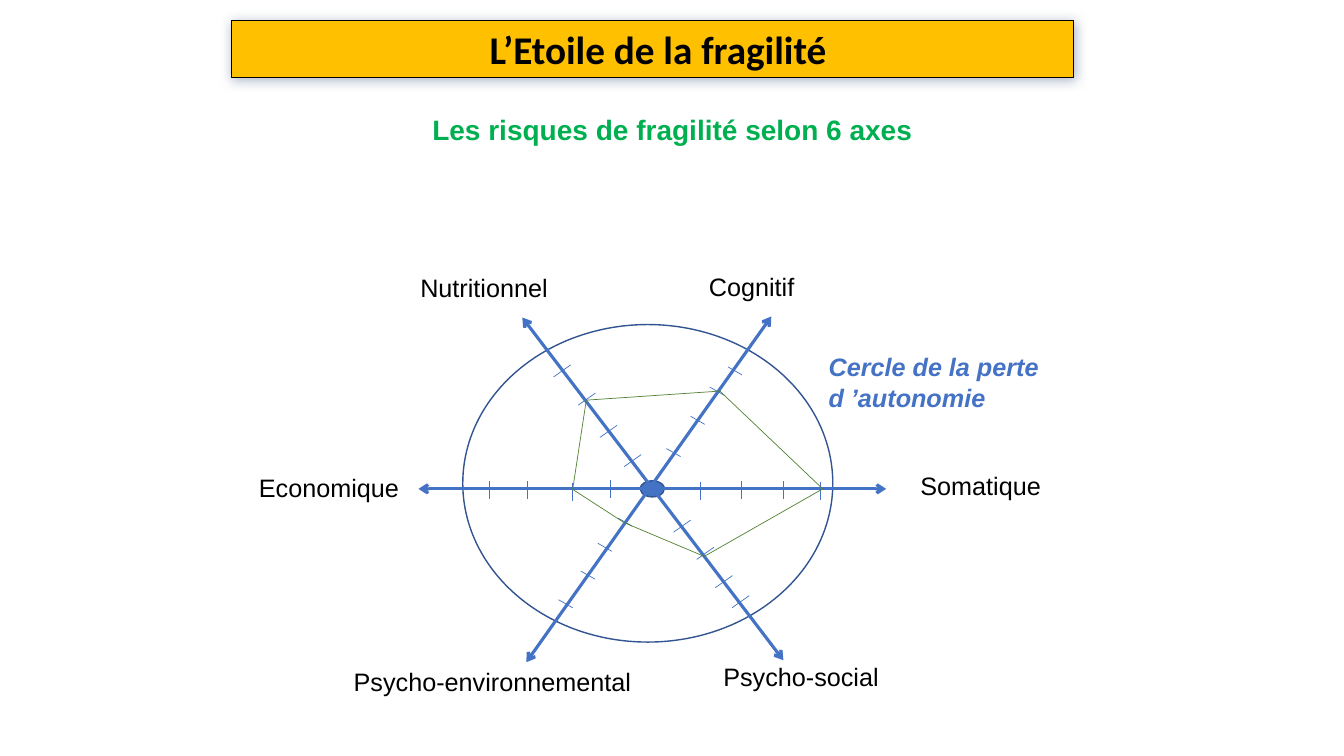
from lxml import etree
from pptx import Presentation
from pptx import util as u
from pptx.dml.color import RGBColor
from pptx.enum import shapes, text
from pptx.oxml.ns import qn

THEME = {
    "axis": "4472C4", "ring": "325491", "profile": "548235",
    "banner": "FFC000", "shadow": "ADB9CA", "ink": "000000", "subtitle": "00B050",
    "title_font": "Calibri", "body_font": "Arial",
    "title_size": 28, "subtitle_size": 20, "label_size": 18,
    "axis_width": 2.25, "ring_width": 1, "banner_width": 0.75, "thin_width": 0.5,
}

prs = Presentation()
prs.slide_width, prs.slide_height = u.Inches(13.33), u.Inches(7.5)
s = prs.slides.add_slide(prs.slide_layouts[6])
CELL = prs.slide_height / 75  # square grid, 75 rows high


def segment(start, end, color, width, arrows=False):
    ends = [round(v * CELL) for v in (*start, *end)]
    line = s.shapes.add_connector(shapes.MSO_CONNECTOR.STRAIGHT, *ends)
    line.line.color.rgb = RGBColor.from_string(THEME[color])
    line.line.width = u.Pt(THEME[width])
    if arrows:
        ln = line.line._get_or_add_ln()
        for tag in ("a:headEnd", "a:tailEnd"):
            etree.SubElement(ln, qn(tag), type="arrow")
    etree.SubElement(line._element.spPr, qn("a:effectLst"))


def write(sp, words, size, color="ink", font="body_font", align="LEFT", bold=False, italic=False):
    tf = sp.text_frame
    tf.word_wrap = True
    tf.vertical_anchor = text.MSO_ANCHOR.TOP
    tf.auto_size = text.MSO_AUTO_SIZE.SHAPE_TO_FIT_TEXT
    p = tf.paragraphs[0]
    p.alignment = text.PP_ALIGN[align]
    r = p.add_run()
    r.text = words
    r.font.name, r.font.size = THEME[font], u.Pt(THEME[size])
    r.font.bold, r.font.italic = bold, italic
    r.font.color.rgb = RGBColor.from_string(THEME[color])
    return p


# Title banner, outer circle and hub: kind, box, fill, line, width
figures = []
for kind, box, fill, line, width in (
    ("RECTANGLE", (23, 2, 83.5, 5.7), "banner", "ink", "banner_width"),
    ("OVAL", (45.9, 32.2, 36.7, 31.5), None, "ring", "ring_width"),
    ("OVAL", (63.5, 47.7, 2.4, 1.6), "axis", "ring", "ring_width"),
):
    sp = s.shapes.add_shape(shapes.MSO_SHAPE[kind], *[round(v * CELL) for v in box])
    sp.shadow.inherit = False
    if fill:
        sp.fill.solid()
        sp.fill.fore_color.rgb = RGBColor.from_string(THEME[fill])
    else:
        sp.fill.background()
    sp.line.color.rgb = RGBColor.from_string(THEME[line])
    sp.line.width = u.Pt(THEME[width])
    figures.append(sp)

# Title text and soft banner shadow
banner = figures[0]
p = write(banner, "L’Etoile de la fragilité", "title_size", font="title_font", align="CENTER", bold=True)
p._p.get_or_add_pPr().set("marL", str(u.Inches(0.1)))
glow = etree.SubElement(
    banner._element.spPr.find(qn("a:effectLst")), qn("a:outerShdw"),
    blurRad=str(u.Pt(8.5)), dist=str(u.Pt(1)), dir="5400000", algn="t", rotWithShape="0")
etree.SubElement(glow, qn("a:srgbClr"), val=THEME["shadow"])

# Subtitle and circle caption
sp = s.shapes.add_textbox(*[round(v * CELL) for v in (16.7, 10.7, 100, 4.1)])
write(sp, "Les risques de fragilité selon 6 axes", "subtitle_size", "subtitle", align="CENTER", bold=True)
sp = s.shapes.add_textbox(*[round(v * CELL) for v in (81.2, 34.4, 24.8, 7.1)])
write(sp, "Cercle de la perte d ’autonomie", "label_size", "axis", bold=True, italic=True)

# Axis names: left, top, width
for words, left, top, width, align in (
    ("Cognitif", 64.3, 26.4, 20.5, "CENTER"),
    ("Somatique", 90.3, 46.2, 15, "LEFT"),
    ("Psycho-social", 69.2, 65.1, 20.5, "CENTER"),
    ("Psycho-environnemental", 34.1, 65.6, 30.6, "LEFT"),
    ("Economique", 24.7, 46.4, 16, "LEFT"),
    ("Nutritionnel", 40.7, 26.5, 15.7, "LEFT"),
):
    sp = s.shapes.add_textbox(*[round(v * CELL) for v in (left, top, width, 4)])
    write(sp, words, "label_size", align=align)

# Three double-headed axes
for start, end in (
    ((76.5, 31.4), (52.2, 65.7)),
    ((87.9, 48.5), (41.5, 48.5)),
    ((51.8, 31.5), (77.7, 65.5)),
):
    segment(start, end, "axis", "axis_width", arrows=True)

# Graduations: span of one tick, then the tick centres along the axis
for (dx, dy), centres in (
    ((1.4, 0.8), ((72.9, 36.8), (71.1, 38.8), (69.2, 41.7), (66.8, 44.9),
                  (62, 51.8), (60, 54.3), (58.3, 57.05), (56.1, 59.9))),
    ((0, 1.8), ((81.4, 48.7), (77.7, 48.65), (73.5, 48.6), (69.5, 48.7),
                (60.5, 48.55), (56.8, 48.8), (52.3, 48.6), (48.5, 48.6))),
    ((1.7, -1.2), ((67.65, 52.2), (69.95, 54.9), (71.8, 57.7), (73.45, 59.7),
                   (62.75, 45.7), (60.35, 42.8), (58.2, 39.6), (55.75, 36.8))),
):
    for x, y in centres:
        segment((x - dx / 2, y - dy / 2), (x + dx / 2, y + dy / 2), "axis", "thin_width")

# Risk profile, one vertex per axis
profile = [(71.4, 38.8), (81.6, 48.5), (69.85, 55.2), (61.9, 51.85), (56.8, 48.55), (58.15, 39.7)]
for start, end in zip(profile, profile[1:] + profile[:1]):
    segment(start, end, "profile", "thin_width")

prs.save("out.pptx")
